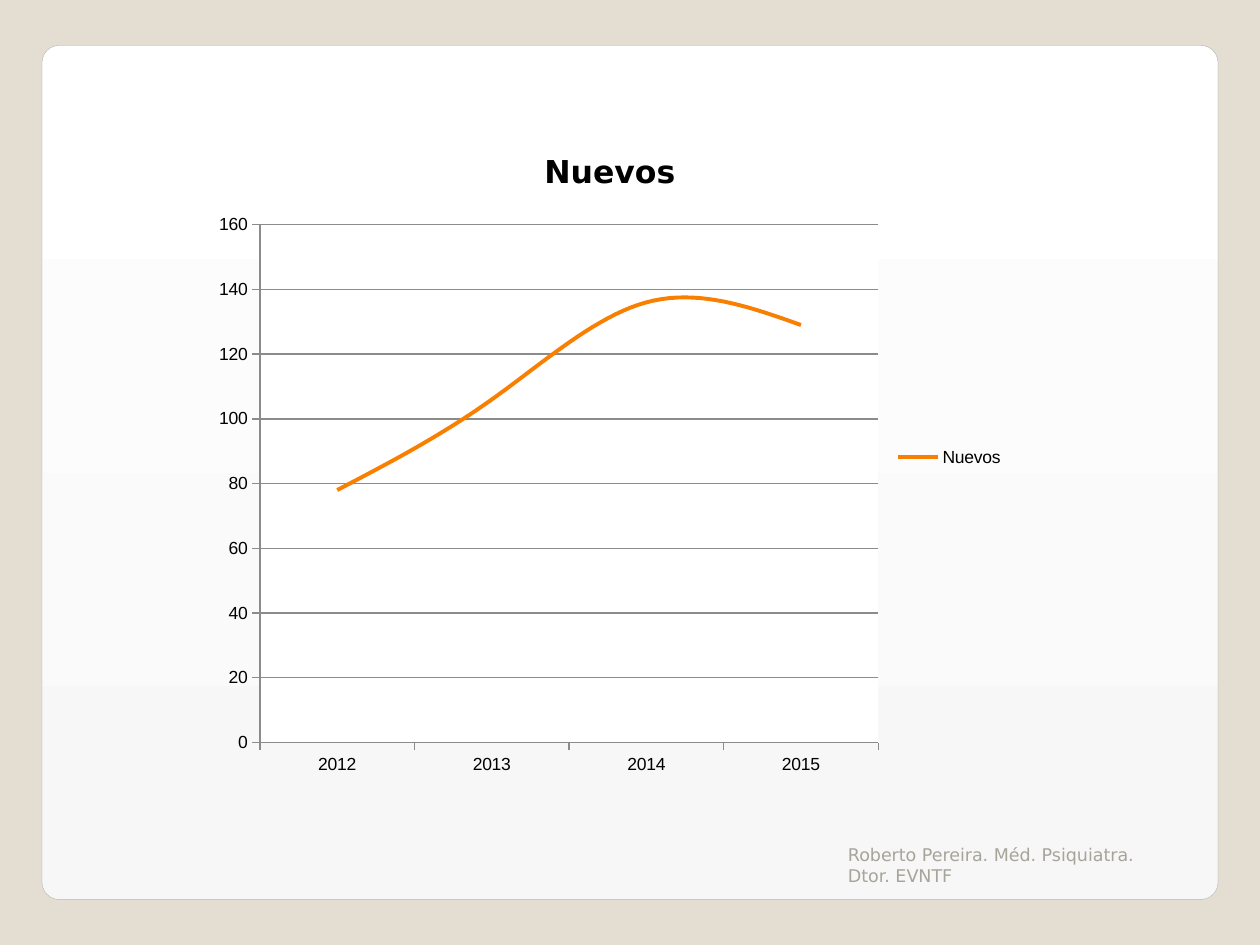
from dataclasses import dataclass

from pptx import Presentation
from pptx import util as u
from pptx.chart.data import CategoryChartData
from pptx.dml.color import RGBColor
from pptx.enum import chart as ch, shapes, text
from pptx.oxml import parse_xml
from pptx.oxml.ns import nsdecls

COLORS = {
    "background": "E3DED1",
    "panel_top": "FFFFFF",
    "panel_bottom": "F7F7F7",
    "panel_line": "A4A4A3",
    "plot": "FFFFFF",
    "axis": "8B8B8B",
    "series": "F97F00",
    "text": "000000",
    "footer": "A7A49A",
}


@dataclass
class Box:
    left: float
    top: float
    width: float
    height: float

    def emu(self) -> list:
        return [u.Pt(v) for v in (self.left, self.top, self.width, self.height)]


PANEL = Box(24, 26, 672, 488)
CHART = Box(116, 71.5, 465, 379.5)
FOOTER = Box(477.5, 481, 180, 29)
PLOT = {"x": 0.07, "y": 0.15, "w": 0.76, "h": 0.78}


def rgb(name: str) -> RGBColor:
    return RGBColor.from_string(COLORS[name])


def style_line(line, color: str, width: float) -> None:
    line.color.rgb = rgb(color)
    line.width = u.Pt(width)


def style_font(font, name: str, size: float, color: str, bold: bool = False) -> None:
    font.name = name
    font.size = u.Pt(size)
    font.bold = bold
    font.color.rgb = rgb(color)


def draw_panel(s, box: Box) -> None:
    sp = s.shapes.add_shape(shapes.MSO_SHAPE.ROUNDED_RECTANGLE, *box.emu())
    sp.adjustments[0] = 0.02
    sp.shadow.inherit = False
    sp.fill.gradient()
    sp.fill.gradient_angle = 270
    for stop, color in zip(sp.fill.gradient_stops, ("panel_top", "panel_bottom")):
        stop.color.rgb = rgb(color)
    style_line(sp.line, "panel_line", 0.17)


def place_plot(chart) -> None:
    plot_area = chart._chartSpace.chart.plotArea
    for old in plot_area.xpath("c:layout"):
        plot_area.remove(old)
    values = "".join(f'<c:{k} val="{v}"/>' for k, v in PLOT.items())
    plot_area.insert(0, parse_xml(
        f'<c:layout {nsdecls("c")}><c:manualLayout><c:layoutTarget val="inner"/>'
        f'<c:xMode val="edge"/><c:yMode val="edge"/>{values}'
        '</c:manualLayout></c:layout>'))
    fill = parse_xml(
        f'<c:spPr {nsdecls("c", "a")}><a:solidFill>'
        f'<a:srgbClr val="{COLORS["plot"]}"/></a:solidFill></c:spPr>')
    plot_area.append(fill)


def draw_chart(s, box: Box) -> None:
    data = CategoryChartData()
    data.categories = ["2012", "2013", "2014", "2015"]
    data.add_series("Nuevos", (78, 106, 136, 129))
    chart = s.shapes.add_chart(ch.XL_CHART_TYPE.LINE, *box.emu(), data).chart
    style_font(chart.font, "Arial", 10, "text")

    chart.has_title = True
    tf = chart.chart_title.text_frame
    tf.text = "Nuevos"
    style_font(tf.paragraphs[0].runs[0].font, "DejaVu Sans", 18, "text", True)

    chart.has_legend = True
    chart.legend.position = ch.XL_LEGEND_POSITION.RIGHT
    chart.legend.include_in_layout = False

    for axis in (chart.category_axis, chart.value_axis):
        axis.major_tick_mark = ch.XL_TICK_MARK.OUTSIDE
        style_line(axis.format.line, "axis", 0.75)
    axis = chart.value_axis
    axis.minimum_scale, axis.maximum_scale, axis.major_unit = 0, 160, 20
    style_line(axis.major_gridlines.format.line, "axis", 0.75)

    chart.plots[0].vary_by_categories = False
    series = chart.plots[0].series[0]
    series.smooth = True
    series.marker.style = ch.XL_MARKER_STYLE.NONE
    style_line(series.format.line, "series", 2.25)
    place_plot(chart)


def draw_footer(s, box: Box) -> None:
    tf = s.shapes.add_textbox(*box.emu()).text_frame
    tf.word_wrap = True
    tf.vertical_anchor = text.MSO_ANCHOR.BOTTOM
    p = tf.paragraphs[0]
    p.text = "Roberto Pereira. Méd. Psiquiatra. Dtor. EVNTF"
    style_font(p.runs[0].font, "DejaVu Sans", 10, "footer")


def main() -> None:
    prs = Presentation()
    prs.slide_width, prs.slide_height = u.Pt(720), u.Pt(540)
    s = prs.slides.add_slide(prs.slide_layouts[6])
    s.background.fill.solid()
    s.background.fill.fore_color.rgb = rgb("background")
    draw_panel(s, PANEL)
    draw_chart(s, CHART)
    draw_footer(s, FOOTER)
    prs.save("out.pptx")


if __name__ == "__main__":
    main()
